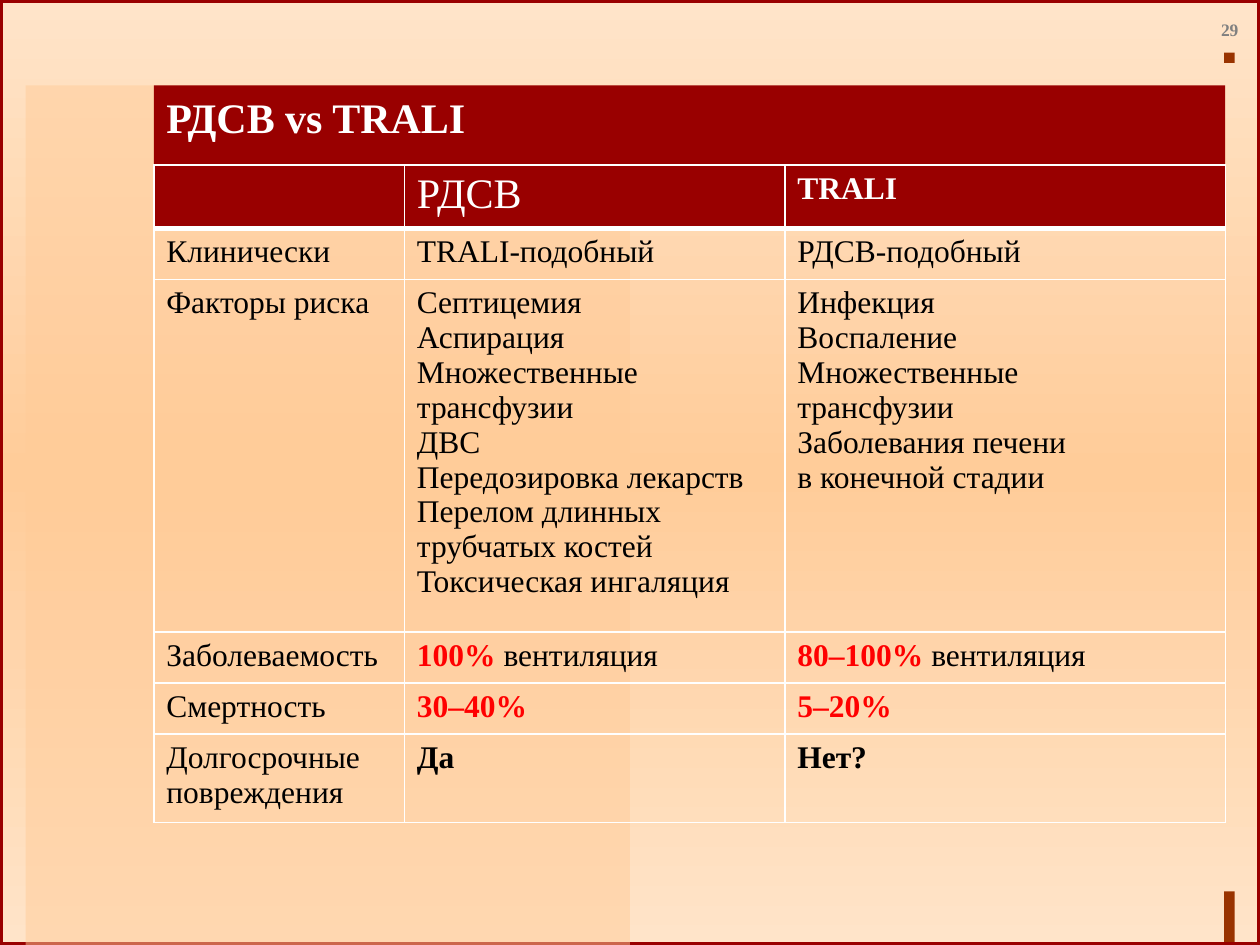
from copy import deepcopy
from dataclasses import dataclass

from lxml.etree import SubElement
from pptx import Presentation
from pptx.dml.color import RGBColor as Rgb
from pptx.enum.shapes import MSO_SHAPE as Shape
from pptx.enum.text import MSO_ANCHOR as Anchor, MSO_AUTO_SIZE as AutoSize, PP_ALIGN as Align
from pptx.oxml.ns import qn
from pptx.util import Cm, Pt


@dataclass(frozen=True)
class Theme:
    font: str = "Times New Roman"
    edge: str = "FFE4C9"
    peach: str = "FFCC99"
    maroon: str = "990000"
    rust: str = "993300"
    white: str = "FFFFFF"
    black: str = "000000"
    red: str = "FF0000"
    grey: str = "808080"
    heading: int = 24
    body: int = 18
    number: int = 10


THEME = Theme()
HEADING = dict(size=THEME.heading, color=THEME.white)
TITLE = dict(HEADING, bold=True)
SUBHEADING = dict(TITLE, size=THEME.body)
BODY = dict(size=THEME.body, color=THEME.black)
STRONG = dict(BODY, bold=True)
ALERT = dict(STRONG, color=THEME.red)
PAGE = dict(size=THEME.number, color=THEME.grey, bold=True)


class SlideBuilder:
    def __init__(self, theme, slide):
        self.theme = theme
        self.slide = slide

    def background(self):
        fill = self.slide.background.fill
        fill.gradient()
        fill.gradient_angle = 90
        first, last = fill.gradient_stops
        first.position, last.position = 0, 1
        first.color.rgb = last.color.rgb = Rgb.from_string(self.theme.edge)
        stops = self.slide._element.find(".//" + qn("a:gsLst"))
        stops.insert(1, deepcopy(stops[0]))
        middle = fill.gradient_stops[1]
        middle.position = 0.5
        middle.color.rgb = Rgb.from_string(self.theme.peach)

    def place(self, element, box):
        for key, value in zip(("left", "top", "width", "height"), box):
            setattr(element, key, Cm(value))

    def rectangle(self, box, fill=None, line=None, opacity=100):
        rect = self.slide.shapes.add_shape(Shape.RECTANGLE, *map(Cm, box))
        rect.shadow.inherit = False
        if fill:
            rect.fill.solid()
            rect.fill.fore_color.rgb = Rgb.from_string(fill)
            if opacity < 100:
                color = rect._element.spPr.find(".//" + qn("a:srgbClr"))
                SubElement(color, qn("a:alpha"), val=str(opacity * 1000))
        else:
            rect.fill.background()
        if line:
            rect.line.color.rgb = Rgb.from_string(line)
            rect.line.width = Pt(3)
        else:
            rect.line.fill.background()

    def add_text(self, paragraph, text, style):
        values = dict(style, name=self.theme.font, size=Pt(style["size"]), bold=style.get("bold", False))
        color = values.pop("color")
        for index, line in enumerate(text.split("\n")):
            if index:
                paragraph.add_line_break()
            run = paragraph.add_run()
            run.text = line
            run.font.color.rgb = Rgb.from_string(color)
            for key, value in values.items():
                setattr(run.font, key, value)

    def title(self, text, box):
        title = self.slide.shapes.title
        self.place(title, box)
        title.fill.solid()
        title.fill.fore_color.rgb = Rgb.from_string(self.theme.maroon)
        for key, value in dict(vertical_anchor=Anchor.TOP, auto_size=AutoSize.NONE).items():
            setattr(title.text_frame, key, value)
        paragraph = title.text_frame.paragraphs[0]
        paragraph.alignment = Align.LEFT
        self.add_text(paragraph, text, TITLE)
        self.slide.shapes._spTree.append(title._element)

    def page_number(self, text, box):
        frame = self.slide.shapes.add_textbox(*map(Cm, box)).text_frame
        layout = dict(word_wrap=False, vertical_anchor=Anchor.MIDDLE, margin_left=0,
                      margin_right=0, margin_top=0, margin_bottom=0)
        for key, value in layout.items():
            setattr(frame, key, value)
        frame.paragraphs[0].alignment = Align.CENTER
        self.add_text(frame.paragraphs[0], text, PAGE)

    def borders(self, cell, widths):
        properties = cell._tc.get_or_add_tcPr()
        for index, (side, width) in enumerate(widths.items()):
            line = SubElement(properties, qn(f"a:ln{side}"), w=str(Pt(width)))
            SubElement(SubElement(line, qn("a:solidFill")), qn("a:srgbClr"), val=self.theme.white)
            properties.insert(index, line)

    def table(self, rows, left, top, widths, heights):
        box = map(Cm, (left, top, sum(widths), sum(heights)))
        table = self.slide.shapes.add_table(len(rows), len(widths), *box).table
        table.first_row = table.horz_banding = False
        for column, width in zip(table.columns, widths):
            column.width = Cm(width)
        for row, height in zip(table.rows, heights):
            row.height = Cm(height)
        for r, row in enumerate(rows):
            for c, paragraphs in enumerate(row):
                cell = table.cell(r, c)
                if r == 0:
                    cell.fill.solid()
                    cell.fill.fore_color.rgb = Rgb.from_string(self.theme.maroon)
                else:
                    cell.fill.background()
                self.borders(cell, dict(L=1, R=1, T=3 if r == 1 else 1, B=3 if r == 0 else 1))
                for index, runs in enumerate(paragraphs):
                    frame = cell.text_frame
                    paragraph = frame.add_paragraph() if index else frame.paragraphs[0]
                    for text, style in runs:
                        self.add_text(paragraph, text, style)


def lines(*texts, style=BODY):
    return [[(text, style)] for text in texts]


def ventilation(share):
    return [[(share + " ", ALERT), ("вентиляция", BODY)]]


COMPARISON = [
    [[], lines("РДСВ", style=HEADING), lines("TRALI", style=SUBHEADING)],
    [lines("Клинически"), lines("TRALI-подобный"), lines("РДСВ-подобный")],
    [lines("Факторы риска"),
     lines("Септицемия", "Аспирация", "Множественные трансфузии", "ДВС",
           "Передозировка лекарств \nПерелом длинных \nтрубчатых костей", "Токсическая ингаляция"),
     lines("Инфекция", "Воспаление", "Множественные \nтрансфузии",
           "Заболевания печени \nв конечной стадии")],
    [lines("Заболеваемость"), ventilation("100%"), ventilation("80‒100%")],
    [lines("Смертность"), lines("30‒40%", style=ALERT), lines("5‒20%", style=ALERT)],
    [lines("Долгосрочные повреждения"), lines("Да", style=STRONG), lines("Нет?", style=STRONG)],
]


def main():
    deck = Presentation()
    deck.slide_width, deck.slide_height = Cm(25.4), Cm(19.05)
    builder = SlideBuilder(THEME, deck.slides.add_slide(deck.slide_layouts[5]))
    builder.background()
    builder.rectangle((24.68, 17.97, 0.21, 1.06), fill=THEME.rust)
    builder.rectangle((24.68, 1.06, 0.21, 0.21), fill=THEME.rust)
    builder.rectangle((0, 0, 25.4, 19.05), line=THEME.maroon)
    builder.rectangle((0.52, 1.72, 12.18, 17.33), fill=THEME.peach, opacity=50)
    builder.page_number("29", (24.43, 0.34, 0.72, 0.5))
    builder.title("РДСВ vs TRALI", (3.1, 1.72, 21.6, 1.6))
    builder.table(COMPARISON, 3.1, 3.33, (5.05, 7.67, 8.88), (1.27, 1.03, 7.11, 1.03, 1.03, 1.78))
    deck.save("out.pptx")


if __name__ == "__main__":
    main()
